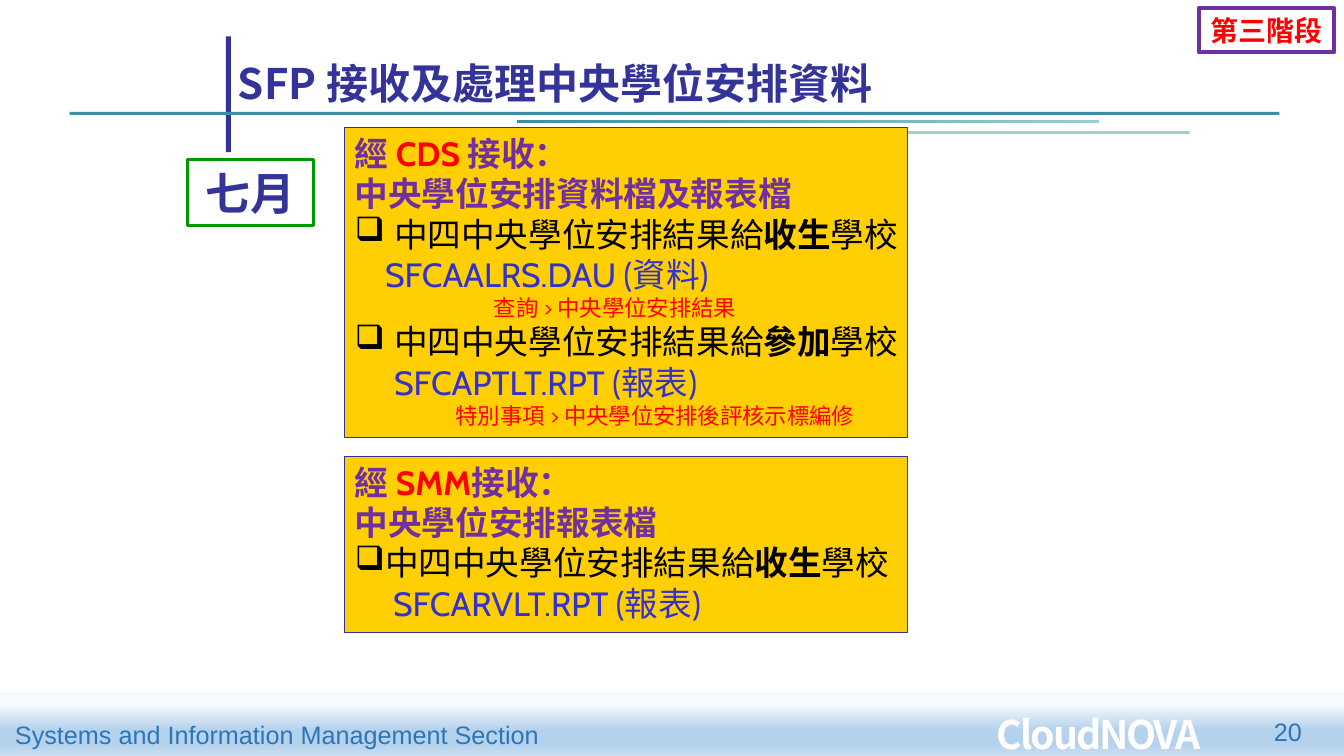
from lxml import etree
from pptx import Presentation
from pptx.dml.color import RGBColor
from pptx.enum import shapes, text
from pptx.oxml import ns
from pptx.util import Inches, Pt

CJK, LATIN, SANS = "Noto Sans CJK SC", "Cabin", "Arial"
NAVY, PURPLE, RED, BLUE = "333399", "7030A0", "FF0000", "3333CC"
BLACK, TEAL, FOOTER_BLUE = "000000", "3F8DA5", "2E75B6"
LEFT, CENTER, RIGHT = text.PP_ALIGN.LEFT, text.PP_ALIGN.CENTER, text.PP_ALIGN.RIGHT
TOP, MIDDLE = text.MSO_ANCHOR.TOP, text.MSO_ANCHOR.MIDDLE


def color(value):
    return RGBColor.from_string(value)


def add_run(paragraph, words, size, font, hue, bold=False):
    run = paragraph.add_run()
    run.text = words
    run.font.size = Pt(size)
    run.font.name = font
    run.font.bold = bold
    run.font.color.rgb = color(hue)
    east_asian = etree.SubElement(run._r.get_or_add_rPr(), ns.qn("a:ea"))
    east_asian.set("typeface", font)
    return run


def add_rect(slide, place, fill=None, line=None, width=0.75):
    rect = slide.shapes.add_shape(shapes.MSO_SHAPE.RECTANGLE, *map(Inches, place))
    rect.shadow.inherit = False
    if fill:
        rect.fill.solid()
        rect.fill.fore_color.rgb = color(fill)
    else:
        rect.fill.background()
    if line:
        rect.line.color.rgb = color(line)
        rect.line.width = Pt(width)
    else:
        rect.line.fill.background()
    return rect


def add_gradient(slide, place, stops, angle):
    band = add_rect(slide, place)
    band.fill.gradient()
    band.fill.gradient_angle = angle
    stop_list = band._element.spPr.find(".//" + ns.qn("a:gsLst"))
    for old in list(stop_list):
        stop_list.remove(old)
    for percent, hue in stops:
        stop = etree.SubElement(stop_list, ns.qn("a:gs"), pos=str(percent * 1000))
        etree.SubElement(stop, ns.qn("a:srgbClr"), val=hue)


def add_label(slide, place, words, size, font, hue, align=LEFT, bold=False):
    label = slide.shapes.add_textbox(*map(Inches, place))
    label.text_frame.word_wrap = True
    paragraph = label.text_frame.paragraphs[0]
    paragraph.alignment = align
    return add_run(paragraph, words, size, font, hue, bold)


def add_badge(slide, place, words, size, hue, line, width):
    badge = add_rect(slide, place, line=line, width=width)
    frame = badge.text_frame
    frame.word_wrap = False
    frame.vertical_anchor = MIDDLE
    frame.paragraphs[0].alignment = CENTER
    add_run(frame.paragraphs[0], words, size, CJK, hue, True)


def add_panel(slide, place, lines):
    """Each line is (indent, bulleted, size, runs); a run is (words, colour, bold)."""
    panel = add_rect(slide, place, "FFCF01", NAVY)
    frame = panel.text_frame
    frame.word_wrap = True
    frame.margin_right = 0
    frame.vertical_anchor = TOP
    for number, (indent, bulleted, size, runs) in enumerate(lines):
        paragraph = frame.add_paragraph() if number else frame.paragraphs[0]
        paragraph.alignment = LEFT
        properties = paragraph._p.get_or_add_pPr()
        properties.set("marL", str(Inches(indent)))
        properties.set("indent", str(-Inches(indent) if bulleted else 0))
        if bulleted:
            etree.SubElement(properties, ns.qn("a:buChar"), char="❑")
        for words, hue, bold in runs:
            add_run(paragraph, words, size, LATIN, hue, bold)


def heading(channel, files):
    return [
        (0, False, 24, [("經 ", PURPLE, True), (channel, RED, True), ("接收：", PURPLE, True)]),
        (0, False, 24, [(files, PURPLE, True)]),
    ]


def result(indent, school):
    return (indent, True, 24, [("中四中央學位安排結果給", BLACK, False),
                               (school, BLACK, True), ("學校", BLACK, False)])


def file_name(indent, words):
    return (indent, False, 24, [(words, BLUE, False)])


def menu_path(indent, words):
    return (indent, False, 16, [(words, RED, False)])


def main():
    prs = Presentation()
    prs.slide_width, prs.slide_height = Inches(13.33), Inches(7.5)
    slide = prs.slides.add_slide(prs.slide_layouts[5])

    # Footer band and title rules
    add_gradient(slide, (0, 6.87, 13.33, 0.64),
                 [(18, "F7FAFD"), (58, "B5D2EC"), (81, "B5D2EC"), (100, "CEE1F2")], 270)
    add_rect(slide, (2.24, 0.36, 0.05, 1.15), NAVY)
    add_rect(slide, (0.69, 1.11, 12, 0.03), TEAL)
    add_gradient(slide, (5.13, 1.19, 5.77, 0.03), [(0, TEAL), (100, "9BCAD9")], 0)
    add_rect(slide, (8.13, 1.3, 3.67, 0.03), "A1CDDB")

    # Footer text
    add_label(slide, (0.05, 7.09, 5.45, 0.4), "Systems and Information Management Section",
              18, SANS, FOOTER_BLUE)
    system = add_label(slide, (9.79, 7, 2.73, 0.57), "CloudNOVA", 28, CJK, "FFFFFF", bold=True)
    system._r.get_or_add_rPr().set("spc", "-150")
    add_label(slide, (11.7, 7.06, 1.31, 0.5), "20", 18, SANS, FOOTER_BLUE, RIGHT)

    # Title
    title = slide.shapes.title
    title.left, title.top, title.width, title.height = map(Inches, (2.26, 0.29, 10.44, 0.83))
    title.text_frame.vertical_anchor = text.MSO_ANCHOR.BOTTOM
    title.text_frame.paragraphs[0].alignment = LEFT
    add_run(title.text_frame.paragraphs[0], "SFP 接收及處理中央學位安排資料", 30, CJK, NAVY, True)

    # Month and stage
    add_badge(slide, (1.86, 1.58, 1.25, 0.66), "七月", 32, NAVY, "009900", 2.25)
    add_badge(slide, (11.89, 0.08, 1.34, 0.44), "第三階段", 20, RED, PURPLE, 3)

    # Files received through each channel
    add_panel(slide, (3.42, 1.27, 5.58, 3.07), heading("CDS ", "中央學位安排資料檔及報表檔") + [
        result(0.39, "收生"),
        file_name(0.3, "SFCAALRS.DAU (資料)"),
        menu_path(1.38, "查詢 > 中央學位安排結果"),
        result(0.39, "參加"),
        file_name(0.39, "SFCAPTLT.RPT (報表)"),
        menu_path(1, "特別事項 > 中央學位安排後評核示標編修"),
    ])
    add_panel(slide, (3.42, 4.53, 5.58, 1.75), heading("SMM", "中央學位安排報表檔") + [
        result(0.3, "收生"),
        file_name(0.38, "SFCARVLT.RPT (報表)"),
    ])

    prs.save("out.pptx")


if __name__ == "__main__":
    main()
